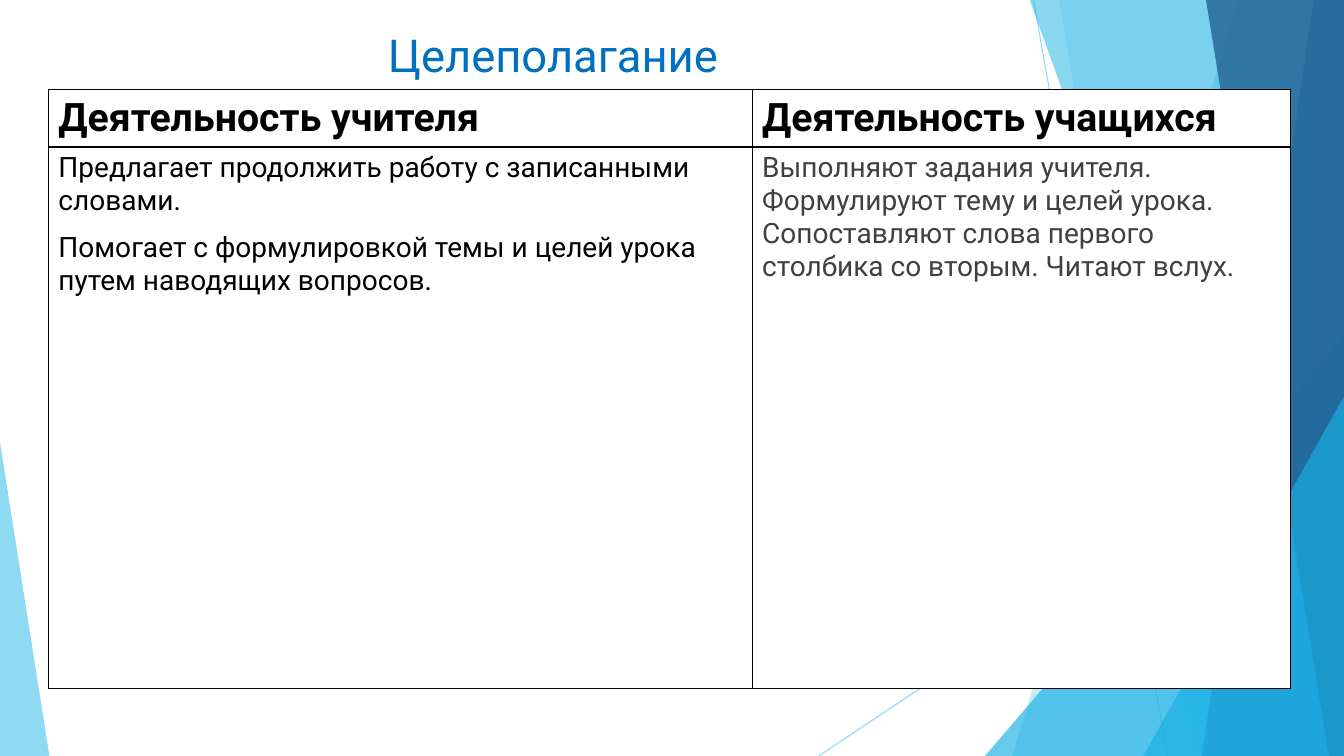
from lxml.etree import SubElement
from pptx import Presentation
from pptx.dml.color import RGBColor
from pptx.enum.shapes import MSO_CONNECTOR, MSO_SHAPE
from pptx.enum.text import MSO_ANCHOR, PP_ALIGN
from pptx.oxml.ns import qn
from pptx.util import Pt

PX = 9144
WIDTH, HEIGHT = 1333, 750

BLACK = RGBColor(0x00, 0x00, 0x00)
WHITE = RGBColor(0xFF, 0xFF, 0xFF)
GRAY = RGBColor(0x40, 0x40, 0x40)
TITLE_BLUE = RGBColor(0x00, 0x70, 0xC0)
SKY = RGBColor(0x5F, 0xCB, 0xEF)
CYAN = RGBColor(0x17, 0xB0, 0xE4)
BLUE = RGBColor(0x2E, 0x83, 0xC3)
NAVY = RGBColor(0x22, 0x62, 0x92)

TITLE = {"name": "Roboto", "size": Pt(32.4), "bold": False}
HEADER = {"name": "Roboto", "size": Pt(28), "bold": True}
BODY = {"name": "Roboto", "size": Pt(20), "bold": False}

COLUMNS = (698, 534)
ROWS = (56, 537)
CELLS = (
    (
        (["Деятельность учителя"], HEADER, BLACK, 0),
        (["Деятельность учащихся"], HEADER, BLACK, 0),
    ),
    (
        (["Предлагает продолжить работу с записанными словами.",
          "Помогает с формулировкой темы и целей урока путем наводящих вопросов."],
         BODY, BLACK, 10),
        (["Выполняют задания учителя.",
          "Формулируют тему и целей урока.",
          "Сопоставляют слова первого столбика со вторым. Читают вслух."],
         BODY, GRAY, 0),
    ),
)


def px(*lengths):
    """Turn pixel lengths into EMU."""
    return [length * PX for length in lengths]


def set_alpha(fill, percent):
    """Make a solid colour partly transparent."""
    for color in fill.iter(qn("a:srgbClr")):
        SubElement(color, qn("a:alpha"), val=str(percent * 1000))


def paint(s, color, alpha):
    """Give a shape a translucent fill with no outline or shadow."""
    s.shadow.inherit = False
    s.fill.solid()
    s.fill.fore_color.rgb = color
    s.line.fill.background()
    set_alpha(s.element.spPr, alpha)


def add_ray(shapes, start, end):
    """Draw a thin translucent line."""
    s = shapes.add_connector(MSO_CONNECTOR.STRAIGHT, *px(*start, *end))
    s.line.color.rgb = SKY
    s.line.width = Pt(0.75)
    set_alpha(s.line._ln, 70)
    SubElement(s.element.spPr, qn("a:effectLst"))


def add_wedge(shapes, top, bottom, color, alpha):
    """Fill the slide right of a slanted edge from top to bottom."""
    builder = shapes.build_freeform(top, -1, scale=PX)
    builder.add_line_segments([(WIDTH, -1), (WIDTH, HEIGHT), (bottom, HEIGHT)])
    paint(builder.convert_to_shape(), color, alpha)


def add_triangle(shapes, box, apex, color, alpha):
    """Draw a triangle whose apex lies at a fraction of its width."""
    s = shapes.add_shape(MSO_SHAPE.ISOSCELES_TRIANGLE, *px(*box))
    s.adjustments[0] = apex
    paint(s, color, alpha)


def write(tf, lines, style, color, after=0):
    """Write one formatted paragraph per line."""
    tf.word_wrap = True
    for i, line in enumerate(lines):
        p = tf.add_paragraph() if i else tf.paragraphs[0]
        p.space_after = Pt(after)
        r = p.add_run()
        r.text = line
        for key, value in style.items():
            setattr(r.font, key, value)
        r.font.color.rgb = color


def add_title(shapes, text, box):
    """Add the centred slide title."""
    tf = shapes.add_textbox(*px(*box)).text_frame
    write(tf, [text], TITLE, TITLE_BLUE)
    tf.vertical_anchor = MSO_ANCHOR.MIDDLE
    tf.paragraphs[0].alignment = PP_ALIGN.CENTER


def add_borders(cell):
    """Outline a cell in black on all sides."""
    props = cell._tc.get_or_add_tcPr()
    for side in ("lnL", "lnR", "lnT", "lnB"):
        line = SubElement(props, qn(f"a:{side}"), w=str(Pt(1)))
        fill = SubElement(line, qn("a:solidFill"))
        SubElement(fill, qn("a:srgbClr"), val=str(BLACK))


def add_activity_table(shapes, left, top):
    """Add the table of teacher and pupil activities."""
    frame = shapes.add_table(len(ROWS), len(COLUMNS),
                             *px(left, top, sum(COLUMNS), sum(ROWS)))
    table = frame.table
    for column, width in zip(table.columns, COLUMNS):
        column.width = width * PX
    for row, height, contents in zip(table.rows, ROWS, CELLS):
        row.height = height * PX
        for cell, content in zip(row.cells, contents):
            add_borders(cell)
            cell.fill.solid()
            cell.fill.fore_color.rgb = WHITE
            write(cell.text_frame, *content)


def add_backdrop(shapes):
    """Draw the layered facets at the slide edges."""
    add_ray(shapes, (1025, 0), (1158, HEIGHT))
    add_ray(shapes, (WIDTH, 403), (812, HEIGHT))
    add_wedge(shapes, 1228, 1004, SKY, 36)
    add_wedge(shapes, 1050, 1183, SKY, 20)
    add_triangle(shapes, (977, 333, 356, 417), 1, CYAN, 66)
    add_wedge(shapes, 1021, 1291, CYAN, 50)
    add_wedge(shapes, 1303, 1192, BLUE, 70)
    add_wedge(shapes, 1196, 1318, NAVY, 80)
    add_triangle(shapes, (1134, 393, 199, 357), 1, CYAN, 66)
    add_triangle(shapes, (0, 439, 49, 311), 0, SKY, 70)


def main():
    """Build and save the slide."""
    prs = Presentation()
    prs.slide_width, prs.slide_height = px(WIDTH, HEIGHT)
    shapes = prs.slides.add_slide(prs.slide_layouts[6]).shapes
    add_backdrop(shapes)
    add_title(shapes, "Целеполагание", (82, 19, 933, 70))
    add_activity_table(shapes, 48, 89)
    prs.save("out.pptx")


if __name__ == "__main__":
    main()
